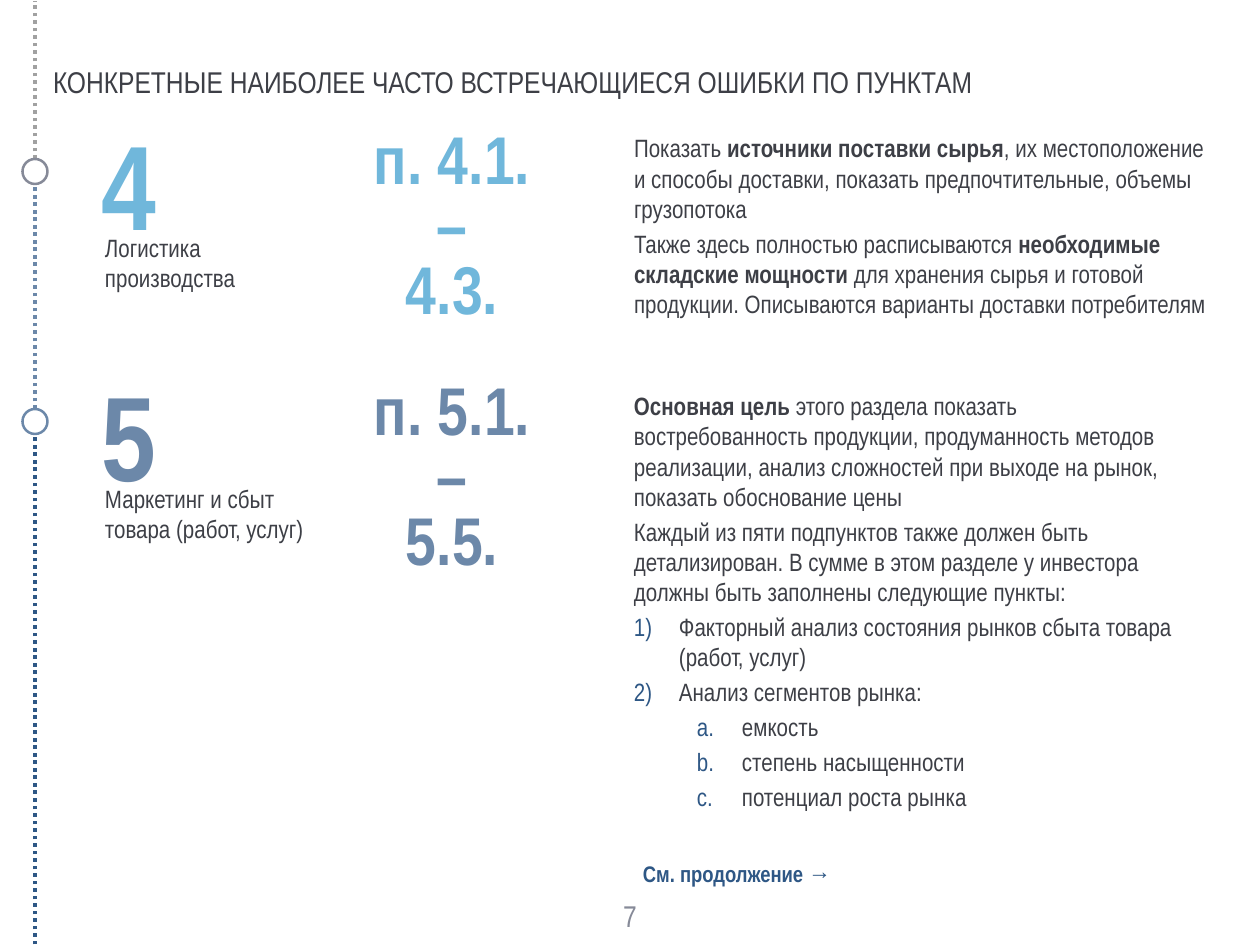
from lxml import etree
from pptx import Presentation
from pptx import util as u
from pptx.dml.color import RGBColor
from pptx.enum import dml, shapes, text
from pptx.oxml.ns import qn

PX = 914400 // 90
FONT = "Arial Narrow"
WHITE = RGBColor(0xFF, 0xFF, 0xFF)
INK = RGBColor(0x3D, 0x3F, 0x46)
SKY = RGBColor(0x70, 0xB7, 0xDB)
STEEL = RGBColor(0x6C, 0x88, 0xA9)
NAVY = RGBColor(0x2E, 0x57, 0x85)
GREY = RGBColor(0x86, 0x8A, 0x98)
SILVER = RGBColor(0xA1, 0xA1, 0xA1)
LEFT, CENTER = text.PP_ALIGN.LEFT, text.PP_ALIGN.CENTER
AXIS = 35
RING = 25
NUMBER, LETTER = "arabicParenR", "alphaLcPeriod"

LOGISTICS = [
    (None, [("Показать ", False), ("источники поставки сырья", True),
            (", их местоположение и способы доставки, показать предпочтительные, "
             "объемы грузопотока", False)]),
    (None, [("Также здесь полностью расписываются ", False),
            ("необходимые складские мощности ", True),
            ("для хранения сырья и готовой продукции. Описываются варианты "
             "доставки потребителям", False)]),
]
MARKETING = [
    (None, [("Основная цель ", True),
            ("этого раздела показать востребованность продукции, продуманность "
             "методов реализации, анализ сложностей при выходе на рынок, показать "
             "обоснование цены", False)]),
    (None, [("Каждый из пяти подпунктов также должен быть детализирован. В сумме "
             "в этом разделе у инвестора должны быть заполнены следующие пункты:",
             False)]),
    (NUMBER, [("Факторный анализ состояния рынков сбыта товара (работ, услуг)", False)]),
    (NUMBER, [("Анализ сегментов рынка:", False)]),
    (LETTER, [("емкость", False)]),
    (LETTER, [("степень насыщенности", False)]),
    (LETTER, [("потенциал роста рынка", False)]),
]
SECTIONS = [
    (111, "4", "Логистика производства", ["п. 4.1. –", "4.3."], SKY, 133, 581, LOGISTICS),
    (362, "5", "Маркетинг и сбыт товара (работ, услуг)", ["п. 5.1. –", "5.5."],
     STEEL, 391, 538, MARKETING),
]


def place(sp, x, y, w, h):
    sp.left, sp.top, sp.width, sp.height = (v * PX for v in (x, y, w, h))


def set_frame(tf, wrap=True, insets=(0, 0, 0, 0), anchor=text.MSO_ANCHOR.TOP):
    tf.auto_size = text.MSO_AUTO_SIZE.NONE
    tf.word_wrap = wrap
    tf.vertical_anchor = anchor
    tf.margin_left, tf.margin_top, tf.margin_right, tf.margin_bottom = (
        v * PX for v in insets)


def add_run(p, words, size, color, bold=False):
    r = p.add_run()
    r.text = words
    r.font.name = FONT
    r.font.size = u.Pt(size)
    r.font.bold = bold
    r.font.color.rgb = color


def add_text(s, box, lines, size, color, bold=False, align=LEFT, spacing=None, **frame):
    tf = s.shapes.add_textbox(*(v * PX for v in box)).text_frame
    set_frame(tf, **frame)
    for i, words in enumerate(lines):
        p = tf.add_paragraph() if i else tf.paragraphs[0]
        p.alignment = align
        if spacing:
            p.line_spacing = spacing
        add_run(p, words, size, color, bold)


def add_numbering(p, scheme):
    pPr = p._p.get_or_add_pPr()
    pPr.set("marL", str((108 if scheme == LETTER else 45) * PX))
    pPr.set("indent", str(-45 * PX))
    clr = etree.SubElement(pPr, qn("a:buClr"))
    etree.SubElement(clr, qn("a:srgbClr"), val=str(NAVY))
    etree.SubElement(pPr, qn("a:buFont"), typeface=FONT)
    etree.SubElement(pPr, qn("a:buAutoNum"), type=scheme)


def add_body(s, box, paragraphs):
    tf = s.shapes.add_textbox(*(v * PX for v in box)).text_frame
    set_frame(tf)
    for i, (scheme, runs) in enumerate(paragraphs):
        p = tf.add_paragraph() if i else tf.paragraphs[0]
        if scheme:
            add_numbering(p, scheme)
            p.level = 1 if scheme == LETTER else 0
        if i:
            p.space_before = u.Pt(4)
        for words, bold in runs:
            add_run(p, words, 20, INK, bold)


def add_title(s, words):
    sp = s.shapes.title
    place(sp, 35, 63, 1191, 36)
    set_frame(sp.text_frame, insets=(0, 0, 13, 0), anchor=text.MSO_ANCHOR.MIDDLE)
    p = sp.text_frame.paragraphs[0]
    p.alignment = LEFT
    p._p.get_or_add_pPr().set("marL", str(18 * PX))
    add_run(p, words, 24, INK)


def add_dots(s, top, bottom, color):
    line = s.shapes.add_connector(
        shapes.MSO_CONNECTOR.STRAIGHT, AXIS * PX, bottom * PX, AXIS * PX, top * PX)
    line.line.color.rgb = color
    line.line.width = u.Pt(3)
    line.line.dash_style = dml.MSO_LINE.ROUND_DOT
    etree.SubElement(line._element.spPr, qn("a:effectLst"))


def add_ring(s, top, color):
    sp = s.shapes.add_shape(shapes.MSO_SHAPE.OVAL, (AXIS * 2 - RING) * PX // 2,
                            top * PX, RING * PX, RING * PX)
    sp.shadow.inherit = False
    sp.fill.solid()
    sp.fill.fore_color.rgb = WHITE
    sp.line.color.rgb = color
    sp.line.width = u.Pt(2)


def add_timeline(s):
    rings = [159, 409]
    tops = [1] + [y + RING for y in rings]
    bottoms = rings + [952]
    for top, bottom, color in zip(tops, bottoms, (SILVER, STEEL, NAVY)):
        add_dots(s, top, bottom, color)
    for y, color in zip(rings, (GREY, STEEL)):
        add_ring(s, y, color)


def add_section(s, top, number, name, items, color, body_top, body_width, body):
    add_text(s, (101, top, 55, 146), [number], 96, color, True, CENTER, wrap=False)
    add_text(s, (105, top + 121, 220, 60), [name], 20, INK)
    add_text(s, (364, top + 22, 176, 195), items, 54, color, True, CENTER, 0.8)
    add_body(s, (634, body_top, body_width, 430 if len(body) > 2 else 188), body)


def main():
    prs = Presentation()
    prs.slide_width, prs.slide_height = 1260 * PX, 945 * PX
    s = prs.slides.add_slide(prs.slide_layouts[5])
    add_title(s, "КОНКРЕТНЫЕ НАИБОЛЕЕ ЧАСТО ВСТРЕЧАЮЩИЕСЯ ОШИБКИ ПО ПУНКТАМ")
    add_timeline(s)
    for section in SECTIONS:
        add_section(s, *section)
    add_text(s, (634, 855, 209, 36), ["См. продолжение →"], 18, NAVY, True,
             wrap=False, insets=(9, 5, 9, 5))
    add_text(s, (605, 890, 50, 50), ["7"], 24, GREY, align=CENTER,
             anchor=text.MSO_ANCHOR.MIDDLE)
    prs.save("out.pptx")


if __name__ == "__main__":
    main()
